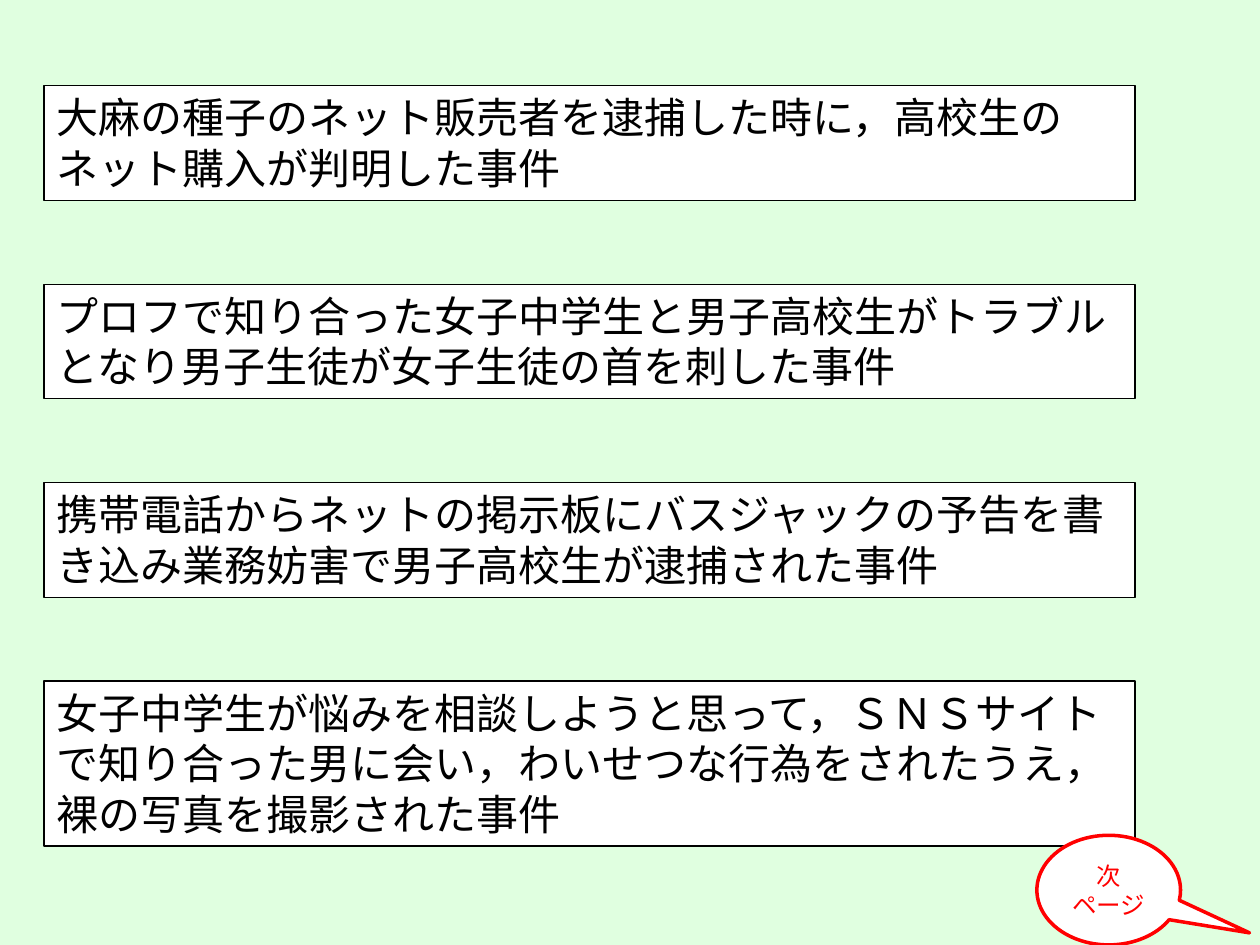
from pptx import Presentation
from pptx.dml.color import RGBColor
from pptx.enum.shapes import MSO_SHAPE as Shape
from pptx.enum.text import MSO_ANCHOR as Anchor, MSO_AUTO_SIZE as Fit, PP_ALIGN as Align
from pptx.util import Inches, Pt

MINT = RGBColor(0xE0, 0xFF, 0xE0)
WHITE = RGBColor(0xFF, 0xFF, 0xFF)
BLACK = RGBColor(0, 0, 0)
RED = RGBColor(0xFF, 0, 0)

CASES = [
    ("大麻の種子のネット販売者を逮捕した時に，高校生のネット購入が判明した事件", 2),
    ("プロフで知り合った女子中学生と男子高校生がトラブルとなり男子生徒が女子生徒の首を刺した事件", 2),
    ("携帯電話からネットの掲示板にバスジャックの予告を書き込み業務妨害で男子高校生が逮捕された事件", 2),
    ("女子中学生が悩みを相談しようと思って，ＳＮＳサイトで知り合った男に会い，"
     "わいせつな行為をされたうえ，裸の写真を撮影された事件", 3),
]
NEXT = ["次", "ページ"]

LEFT, TOP, WIDE, STEP = 0.35, 0.68, 8.66, 1.575
PAD, ROW = 0.11, 0.4


def write(shape, lines, size, color, align=Align.LEFT, anchor=Anchor.TOP, fit=Fit.NONE):
    frame = shape.text_frame
    frame.word_wrap = True
    frame.auto_size = fit
    frame.vertical_anchor = anchor
    frame.text = "\n".join(lines)
    for para in frame.paragraphs:
        para.alignment = align
        font = para.runs[0].font
        font.name = "Calibri"
        font.size = Pt(size)
        font.color.rgb = color


def draw(slide, kind, area, line, width):
    shape = slide.shapes.add_shape(kind, *map(Inches, area))
    shape.shadow.inherit = False
    shape.fill.solid()
    shape.fill.fore_color.rgb = WHITE
    shape.line.color.rgb = line
    shape.line.width = Pt(width)
    return shape


def main():
    deck = Presentation()
    deck.slide_width, deck.slide_height = Inches(10), Inches(7.5)
    slide = deck.slides.add_slide(deck.slide_layouts[6])
    back = slide.background.fill
    back.solid()
    back.fore_color.rgb = MINT

    for i, (text, rows) in enumerate(CASES):
        area = (LEFT, TOP + i * STEP, WIDE, PAD + rows * ROW)
        box = draw(slide, Shape.RECTANGLE, area, BLACK, 0.75)
        write(box, [text], 24, BLACK, fit=Fit.SHAPE_TO_FIT_TEXT)

    call = draw(slide, Shape.OVAL_CALLOUT, (8.23, 6.63, 1.14, 0.87), RED, 2)
    call.adjustments[0], call.adjustments[1] = 0.98, 0.39
    frame = call.text_frame
    frame.margin_left = frame.margin_right = 0
    write(call, NEXT, 14, RED, align=Align.CENTER, anchor=Anchor.MIDDLE)

    deck.save("out.pptx")


if __name__ == "__main__":
    main()
